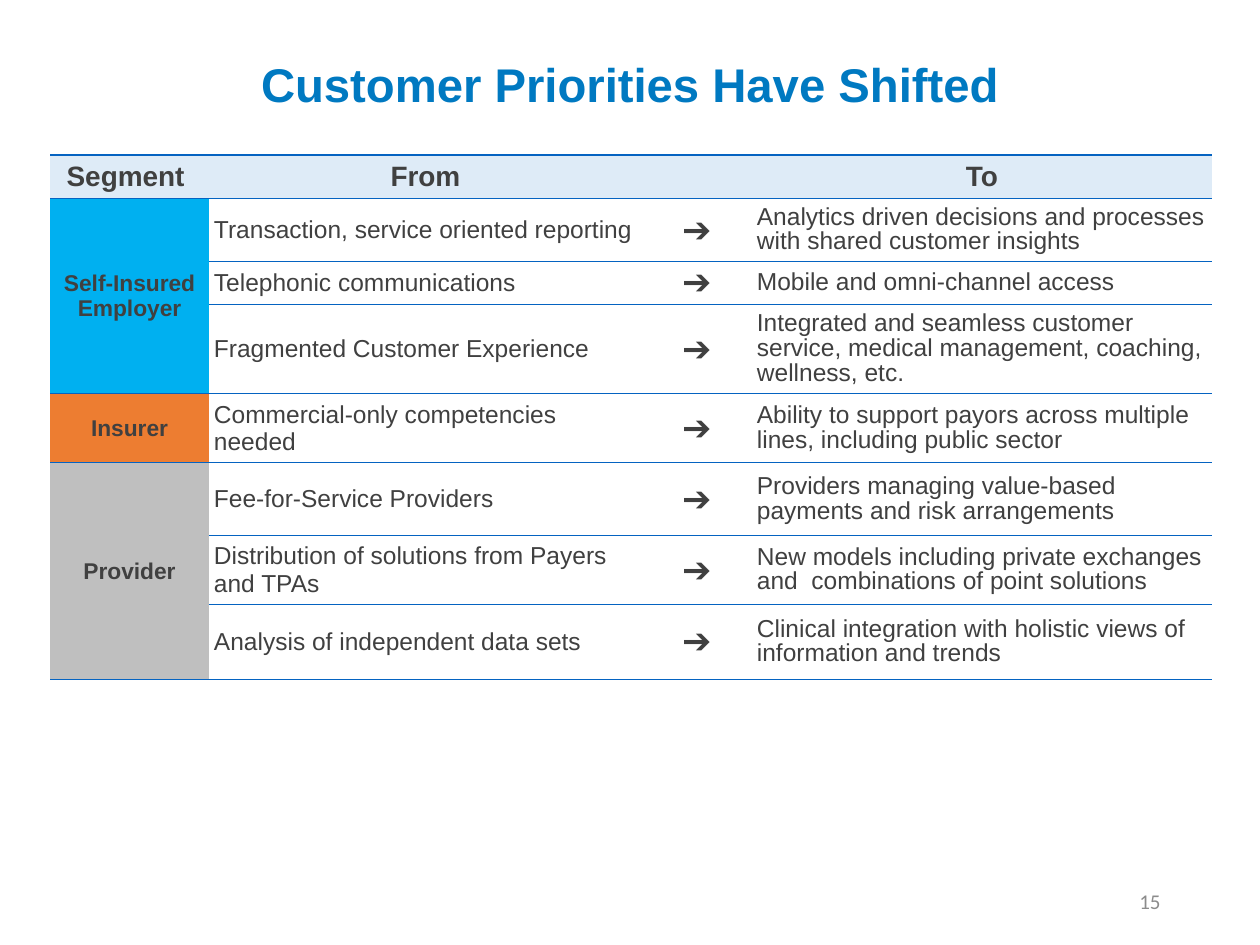
from dataclasses import dataclass

from lxml import etree
from pptx import Presentation
from pptx import util as u
from pptx.dml.color import RGBColor
from pptx.enum import text
from pptx.oxml.ns import qn

PX = 914400 / 126  # EMU in one px
ALIGN = text.PP_ALIGN


@dataclass(frozen=True)
class Theme:
    title: str = "0079C1"
    ink: str = "404040"
    page_number: str = "8C8C8C"
    rule: str = "0563C1"
    header: str = "DEEBF7"
    body: str = "FFFFFF"
    font: str = "Arial"
    symbol_font: str = "Calibri"
    title_size: int = 27
    header_size: int = 16
    segment_size: int = 13
    body_size: int = 14
    arrow_size: int = 20
    number_size: int = 12


THEME = Theme()
PLAIN_TABLE = "{2D5ABB26-0587-4C30-8999-92F81FD0307C}"
COLUMNS = [159, 433, 110, 460]
ROWS = [41, 59, 43, 85, 65, 73, 65, 75]
HEADINGS = ["Segment ", "From", "", "To"]

# Segment name, fill, and its (from, to) shifts
SEGMENTS = [
    ("Self-Insured Employer", "00B0F0", [
        ("Transaction, service oriented reporting",
         "Analytics driven decisions and processes with shared customer insights"),
        ("Telephonic communications", "Mobile and omni-channel access"),
        ("Fragmented Customer Experience",
         "Integrated and seamless customer service, medical management, "
         "coaching, wellness, etc."),
    ]),
    ("Insurer", "ED7D31", [
        ("Commercial-only competencies needed",
         "Ability to support payors across multiple lines, including public sector"),
    ]),
    ("Provider", "BFBFBF", [
        ("Fee-for-Service Providers",
         "Providers managing value-based payments and risk arrangements"),
        ("Distribution of solutions from Payers and TPAs",
         "New models including private exchanges and  combinations of point solutions"),
        ("Analysis of independent data sets",
         "Clinical integration with holistic views of information and trends"),
    ]),
]


def px(length):
    return u.Emu(round(length * PX))


def write(frame, words, size, color, align, font=THEME.font, bold=False, spacing=None):
    frame.text = words
    para = frame.paragraphs[0]
    para.alignment = align
    if spacing:
        para.line_spacing = spacing
    for span in para.runs:
        span.font.name = font
        span.font.size = u.Pt(size)
        span.font.bold = bold
        span.font.color.rgb = RGBColor.from_string(color)


def add_text(page, place, words, **style):
    box = page.shapes.add_textbox(*map(px, place))
    frame = box.text_frame
    frame.word_wrap = True
    frame.vertical_anchor = text.MSO_ANCHOR.MIDDLE
    write(frame, words, **style)


def add_rules(cell):
    """Draw the lines above and below a cell."""
    properties = cell._tc.get_or_add_tcPr()
    for tag in ("a:lnT", "a:lnB"):
        line = etree.SubElement(properties, qn(tag), w=str(u.Pt(0.75)))
        fill = etree.SubElement(line, qn("a:solidFill"))
        etree.SubElement(fill, qn("a:srgbClr"), val=THEME.rule)


def fill_cell(cell, words, fill, size, align=ALIGN.LEFT, margin=5, **style):
    cell.margin_left = cell.margin_right = px(margin)
    cell.margin_top = cell.margin_bottom = px(margin)
    cell.vertical_anchor = text.MSO_ANCHOR.MIDDLE
    add_rules(cell)
    cell.fill.solid()
    cell.fill.fore_color.rgb = RGBColor.from_string(fill)
    write(cell.text_frame, words, size, THEME.ink, align, **style)


def add_grid(page, left, top):
    frame = page.shapes.add_table(len(ROWS), len(COLUMNS), px(left), px(top),
                                  px(sum(COLUMNS)), px(sum(ROWS)))
    table = frame.table
    table.first_row = table.horz_banding = False
    table._tbl.tblPr.find(qn("a:tableStyleId")).text = PLAIN_TABLE
    for column, width in zip(table.columns, COLUMNS):
        column.width = px(width)
    for row, height in zip(table.rows, ROWS):
        row.height = px(height)
    return table


def add_shift(table, row, before, after):
    fill_cell(table.cell(row, 1), before, THEME.body, THEME.body_size)
    fill_cell(table.cell(row, 2), "➔", THEME.body, THEME.arrow_size,
              ALIGN.CENTER, margin=0, font=THEME.symbol_font)
    fill_cell(table.cell(row, 3), after, THEME.body, THEME.body_size, spacing=0.9)


def add_priorities(page):
    table = add_grid(page, 50, 155)
    # Header row
    for column, heading in enumerate(HEADINGS):
        fill_cell(table.cell(0, column), heading, THEME.header, THEME.header_size,
                  ALIGN.CENTER, margin=5 if heading else 0, bold=True)
    # One merged label per segment, one row per shift
    row = 1
    for name, color, shifts in SEGMENTS:
        label = table.cell(row, 0)
        if len(shifts) > 1:
            label.merge(table.cell(row + len(shifts) - 1, 0))
        fill_cell(label, name, color, THEME.segment_size, ALIGN.CENTER, bold=True)
        for before, after in shifts:
            add_shift(table, row, before, after)
            row += 1


def main():
    deck = Presentation()
    deck.slide_width, deck.slide_height = px(1260), px(945)
    page = deck.slides.add_slide(deck.slide_layouts[6])
    # Title
    add_text(page, (0, 19, 1260, 136), "Customer Priorities Have Shifted",
             size=THEME.title_size, color=THEME.title, align=ALIGN.CENTER,
             bold=True, spacing=0.9)
    # Table of shifts
    add_priorities(page)
    # Page number
    add_text(page, (890, 876, 283, 50), "15", size=THEME.number_size,
             color=THEME.page_number, align=ALIGN.RIGHT, font=THEME.symbol_font)
    deck.save("out.pptx")


if __name__ == "__main__":
    main()
